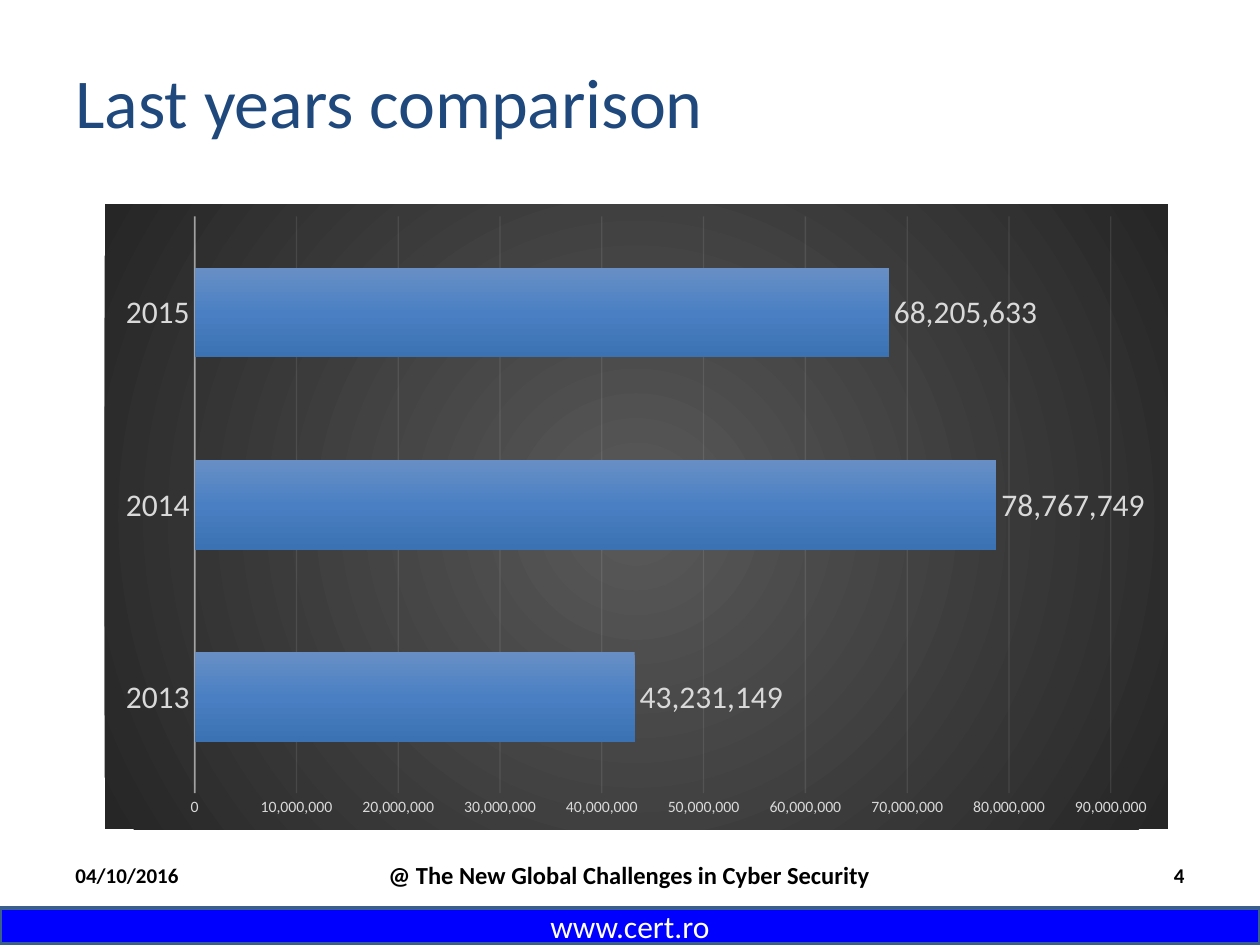
from lxml import etree
from pptx import Presentation
from pptx.chart.data import CategoryChartData
from pptx.dml.color import RGBColor
from pptx.enum.chart import XL_CHART_TYPE, XL_LABEL_POSITION, XL_TICK_MARK
from pptx.enum.shapes import MSO_SHAPE
from pptx.enum.text import MSO_ANCHOR, PP_ALIGN
from pptx.oxml import parse_xml
from pptx.oxml.ns import qn
from pptx.util import Pt

LEFT, CENTER, RIGHT = PP_ALIGN.LEFT, PP_ALIGN.CENTER, PP_ALIGN.RIGHT
MIDDLE = MSO_ANCHOR.MIDDLE
RECT = MSO_SHAPE.RECTANGLE
BARS = XL_CHART_TYPE.BAR_CLUSTERED
OUTER = XL_LABEL_POSITION.OUTSIDE_END
NO_TICK = XL_TICK_MARK.NONE

FONT = "Calibri"
NUMBER = "#,##0"
WHITE = RGBColor(0xFF, 0xFF, 0xFF)
BLACK = RGBColor(0, 0, 0)
NAVY = RGBColor(0x1F, 0x49, 0x7D)
BLUE = RGBColor(0, 0, 0xFF)
EDGE = RGBColor(0x3A, 0x5F, 0x8C)
PALE = RGBColor(0xD9, 0xD9, 0xD9)
MIST = RGBColor(0xF2, 0xF2, 0xF2)
BACK = [(0, RGBColor(0x59, 0x59, 0x59)), (100, RGBColor(0x26, 0x26, 0x26))]
SHADE = [
    (0, RGBColor(0x68, 0x8F, 0xC5)),
    (50, RGBColor(0x4A, 0x80, 0xC3)),
    (100, RGBColor(0x3B, 0x72, 0xB3)),
]
RADIAL = ('<a:path path="circle"><a:fillToRect l="50000" t="50000" '
          'r="50000" b="50000"/></a:path>')
DOWN = '<a:lin ang="5400000" scaled="0"/>'
SPACE = ('xmlns:a="http://schemas.openxmlformats.org/drawingml/2006/main" '
         'xmlns:c="http://schemas.openxmlformats.org/drawingml/2006/chart"')


def style(font, size, color, bold=False):
    font.name = FONT
    font.size = Pt(size)
    font.color.rgb = color
    font.bold = bold


def write(shape, text, size, color, align=LEFT, bold=False):
    frame = shape.text_frame
    frame.text = text
    frame.word_wrap = True
    frame.vertical_anchor = MIDDLE
    line = frame.paragraphs[0]
    line.alignment = align
    style(line.runs[0].font, size, color, bold)


def add_text(slide, box, *words):
    write(slide.shapes.add_textbox(*map(Pt, box)), *words)


def add_band(slide):
    band = slide.shapes.add_shape(RECT, Pt(0), Pt(519), Pt(720), Pt(20.5))
    band.shadow.inherit = False
    band.fill.solid()
    band.fill.fore_color.rgb = BLUE
    band.line.color.rgb = EDGE
    band.line.width = Pt(2)
    write(band, "www.cert.ro", 18, WHITE, CENTER)


def make_props(stops, kind):
    marks = "".join(
        f'<a:gs pos="{pos * 1000}"><a:srgbClr val="{color}"/></a:gs>'
        for pos, color in stops)
    return parse_xml(
        f'<c:spPr {SPACE}><a:gradFill rotWithShape="1"><a:gsLst>{marks}'
        f'</a:gsLst>{kind}</a:gradFill><a:ln><a:noFill/></a:ln></c:spPr>')


def draw_line(form, width, alpha):
    line = form.line
    line.color.rgb = MIST
    line.width = Pt(width)
    tint = line.fill._xPr.find(".//" + qn("a:srgbClr"))
    etree.SubElement(tint, qn("a:alpha")).set("val", str(alpha * 1000))


def set_axis(axis, size):
    axis.major_tick_mark = NO_TICK
    axis.minor_tick_mark = NO_TICK
    style(axis.tick_labels.font, size, PALE)


def add_bars(slide):
    data = CategoryChartData(number_format=NUMBER)
    data.categories = ["2013", "2014", "2015"]
    data.add_series("Series 1", (43231149, 78767749, 68205633))
    box = map(Pt, (59.76, 116.64, 607.68, 357.12))
    chart = slide.shapes.add_chart(BARS, *box, data).chart
    chart.has_legend = False
    chart.has_title = False
    style(chart.font, 10, BLACK)
    root = chart._chartSpace
    root.find(qn("c:txPr")).addprevious(make_props(BACK, RADIAL))

    years = chart.category_axis
    set_axis(years, 18)
    years.has_major_gridlines = False
    draw_line(years.format, 1, 54)

    scale = chart.value_axis
    set_axis(scale, 9)
    scale.minimum_scale = 0
    scale.maximum_scale = 90000000
    scale.major_unit = 10000000
    scale.tick_labels.number_format = NUMBER
    scale.tick_labels.number_format_is_linked = False
    scale.format.line.fill.background()
    scale.has_major_gridlines = True
    draw_line(scale.major_gridlines.format, 0.75, 10)

    plot = chart.plots[0]
    plot.vary_by_categories = False
    plot.gap_width = 115
    plot.overlap = -20
    plot.has_data_labels = True
    labels = plot.data_labels
    labels.show_value = True
    labels.position = OUTER
    labels.number_format = NUMBER
    labels.number_format_is_linked = False
    style(labels.font, 18, PALE)

    bars = plot.series[0]
    props = bars._element.get_or_add_spPr()
    props.getparent().replace(props, make_props(SHADE, DOWN))


def main():
    deck = Presentation()
    deck.slide_width, deck.slide_height = Pt(720), Pt(540)
    slide = deck.slides.add_slide(deck.slide_layouts[6])
    add_band(slide)
    add_text(slide, (36, 26, 432, 62.5), "Last years comparison", 40, NAVY)
    foot = [
        (36, 168, "04/10/2016", 12, LEFT),
        (206.5, 306, "@ The New Global Challenges in Cyber Security",
         14, CENTER),
        (516, 168, "4", 12, RIGHT),
    ]
    for left, width, text, size, align in foot:
        add_text(slide, (left, 485.5, width, 28.75),
                 text, size, BLACK, align, True)
    add_bars(slide)
    deck.save("out.pptx")


if __name__ == "__main__":
    main()
